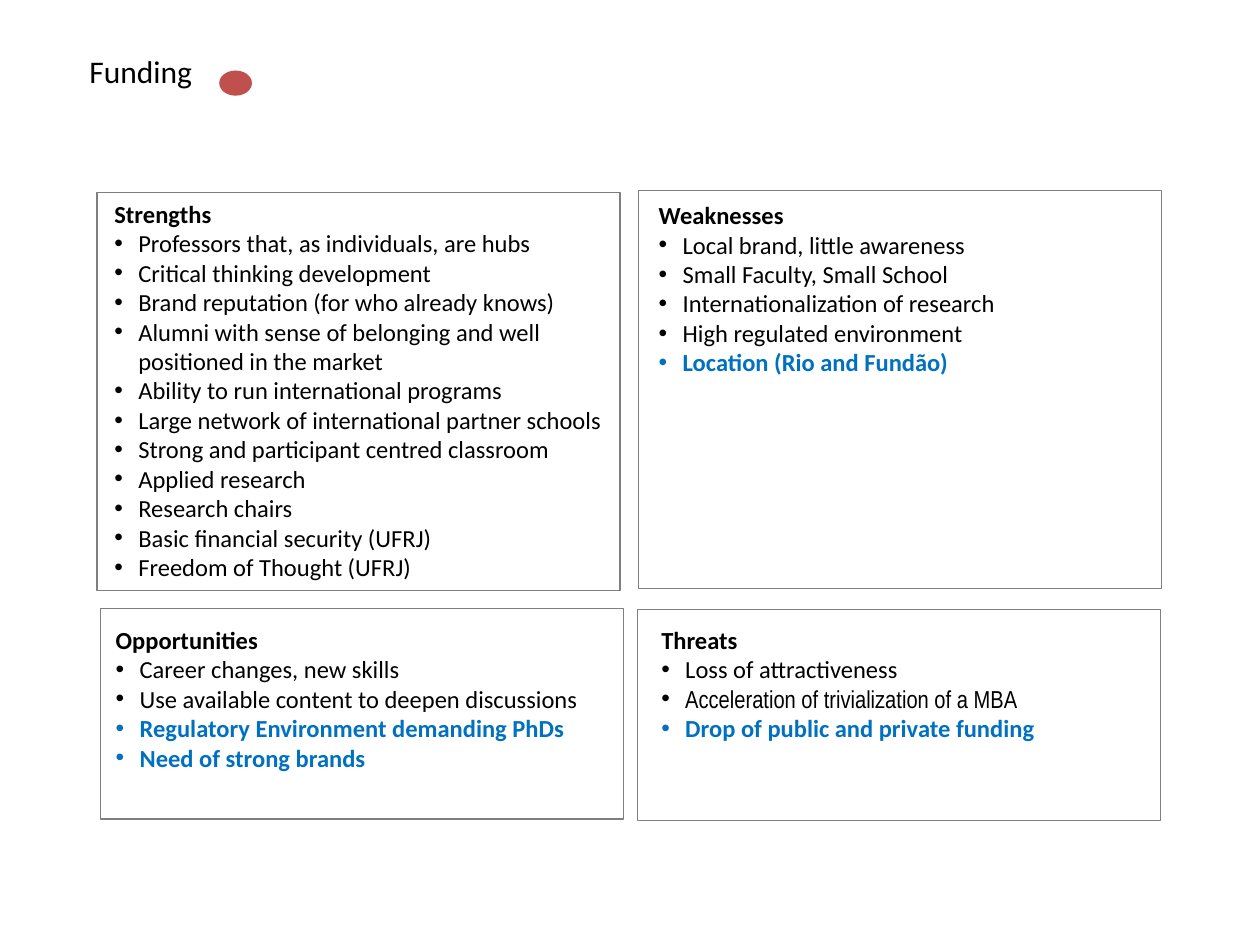
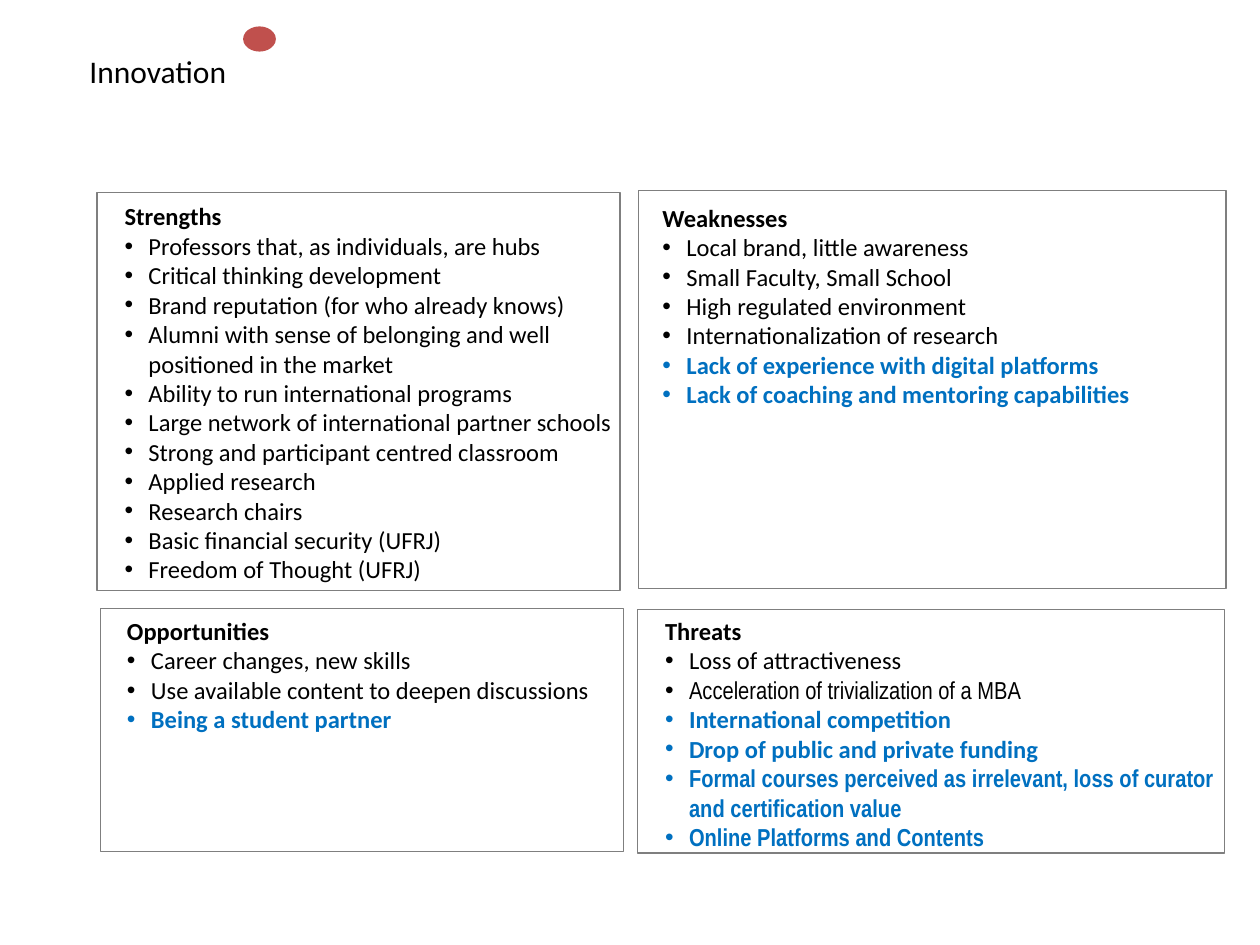
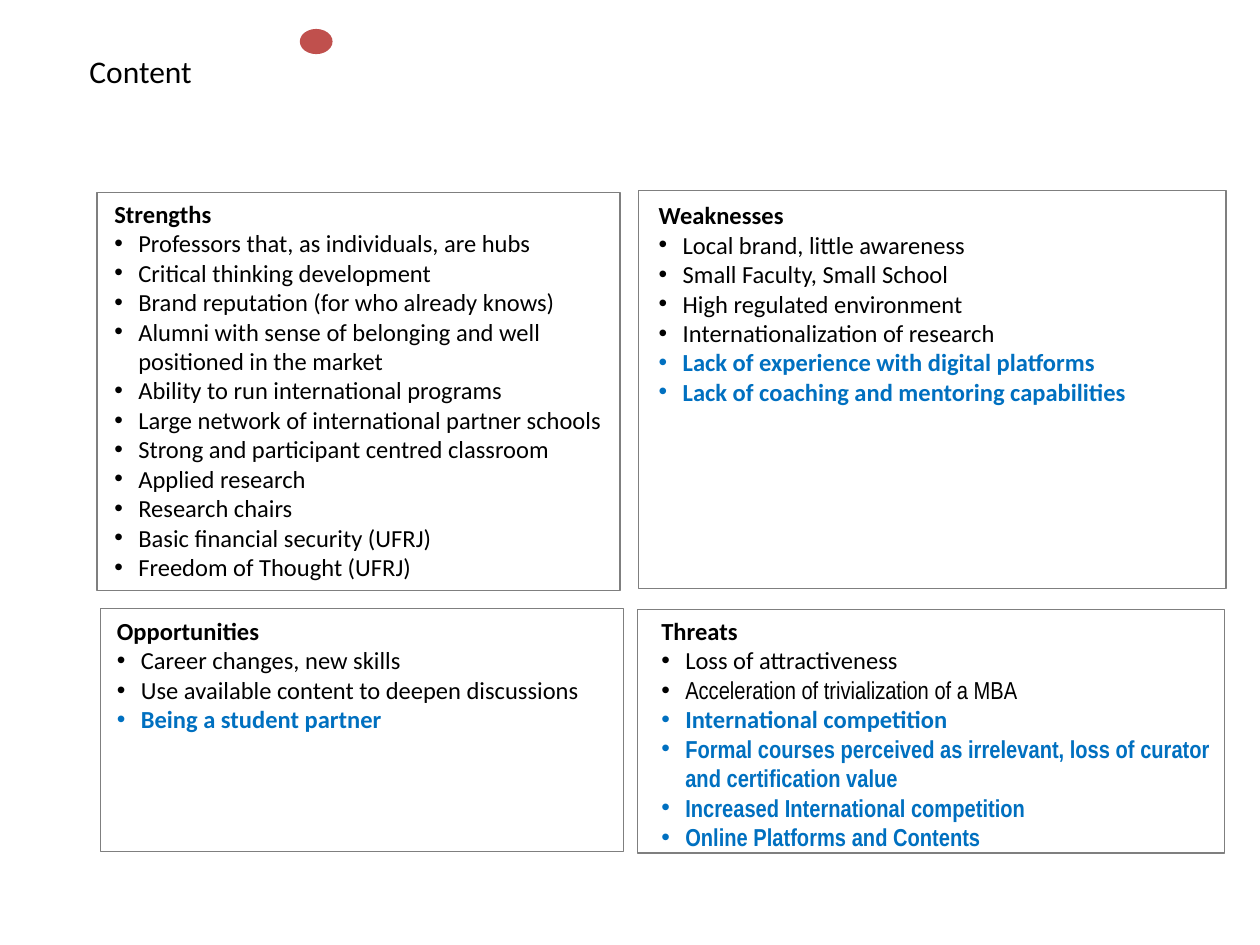
from typing import NamedTuple

from lxml import etree
from pptx import Presentation
from pptx.dml.color import RGBColor
from pptx.enum.shapes import MSO_SHAPE
from pptx.enum.text import MSO_ANCHOR, MSO_AUTO_SIZE, PP_ALIGN
from pptx.oxml.ns import qn
from pptx.util import Inches, Pt

OVAL, RECTANGLE = MSO_SHAPE.OVAL, MSO_SHAPE.RECTANGLE
TOP, LEFT, FIT_TEXT = MSO_ANCHOR.TOP, PP_ALIGN.LEFT, MSO_AUTO_SIZE.SHAPE_TO_FIT_TEXT

BLACK = RGBColor(0x00, 0x00, 0x00)
HIGHLIGHT = RGBColor(0x00, 0x70, 0xC0)
MARKER = RGBColor(0xC0, 0x50, 0x4D)
FRAME = RGBColor(0x7F, 0x7F, 0x7F)

COLUMNS, ROWS = 100, 75
TITLE_ONLY = 5
LINE_ROWS, PADDING_ROWS = 2.35, 1


class Point(NamedTuple):
    text: str
    highlighted: bool = False
    font: str = "Calibri"


class Note(NamedTuple):
    """A headed list: its place and width in columns and rows, and its height in lines."""
    left: float
    top: float
    width: float
    lines: int
    heading: str
    points: list


class Analysis(NamedTuple):
    title: str
    title_width: float
    marker: tuple
    right_width: float
    lower_height: float
    notes: list


def plain(*texts):
    return [Point(text) for text in texts]


def new(*texts, font="Calibri"):
    return [Point(text, True, font) for text in texts]


STRENGTHS = plain(
    "Professors that, as individuals, are hubs",
    "Critical thinking development",
    "Brand reputation (for who already knows)",
    "Alumni with sense of belonging and well positioned in the market",
    "Ability to run international programs",
    "Large network of international partner schools",
    "Strong and participant centred classroom",
    "Applied research",
    "Research chairs",
    "Basic financial security (UFRJ)",
    "Freedom of Thought (UFRJ)",
)
LOCAL_LIMITS = plain("Local brand, little awareness", "Small Faculty, Small School")
DIGITAL_WEAKNESSES = (
    LOCAL_LIMITS
    + plain("High regulated environment", "Internationalization of research")
    + new("Lack of experience with digital platforms",
          "Lack of coaching and mentoring capabilities")
)
OPPORTUNITIES = plain("Career changes, new skills",
                      "Use available content to deepen discussions")
PARTNER_OPPORTUNITIES = OPPORTUNITIES + new("Being a student partner")
THREATS = plain("Loss of attractiveness") + [
    Point("Acceleration of trivialization of a MBA", font="Arial Narrow")]
COMPETITION = new("International competition")
FUNDING_DROP = new("Drop of public and private funding")
IRRELEVANCE = new("Formal courses perceived as irrelevant, loss of curator "
                  "and certification value", font="Arial Narrow")
ONLINE = new("Online Platforms and Contents", font="Arial Narrow")

ANALYSES = [
    Analysis("Funding", 10.3, (17.4, 5.6), 41.5, 16.7, [
        Note(8.1, 15.3, 43.3, 13, "Strengths", STRENGTHS),
        Note(51.3, 15.4, 40.6, 7, "Weaknesses",
             LOCAL_LIMITS
             + plain("Internationalization of research", "High regulated environment")
             + new("Location (Rio and Fundão)")),
        Note(8.2, 49.1, 43.3, 5, "Opportunities",
             OPPORTUNITIES + new("Regulatory Environment demanding PhDs",
                                 "Need of strong brands")),
        Note(51.5, 49.1, 40.6, 7, "Threats", THREATS + FUNDING_DROP),
    ]),
    Analysis("Innovation", 13, (19.3, 2.1), 46.6, 19.3, [
        Note(8.9, 15.5, 43.3, 13, "Strengths", STRENGTHS),
        Note(51.6, 15.6, 45.6, 8, "Weaknesses", DIGITAL_WEAKNESSES),
        Note(9.1, 48.4, 43.3, 4, "Opportunities", PARTNER_OPPORTUNITIES),
        Note(51.8, 48.4, 48.2, 8, "Threats",
             THREATS + COMPETITION + FUNDING_DROP + IRRELEVANCE + ONLINE),
    ]),
    Analysis("Content", 10.2, (23.8, 2.3), 46.6, 19.3, [
        Note(8.1, 15.3, 43.3, 13, "Strengths", STRENGTHS),
        Note(51.3, 15.4, 46, 8, "Weaknesses", DIGITAL_WEAKNESSES),
        Note(8.3, 48.4, 43.3, 5, "Opportunities", PARTNER_OPPORTUNITIES),
        Note(51.5, 48.4, 45.8, 8, "Threats",
             THREATS + COMPETITION + IRRELEVANCE
             + new("Increased International competition", font="Arial Narrow") + ONLINE),
    ]),
]


class Deck:
    def __init__(self):
        self.presentation = Presentation()
        self.presentation.slide_width = Inches(10)
        self.presentation.slide_height = Inches(7.5)
        self.slide = None

    def place(self, left, top, width, height):
        """Turn columns and rows of the grid into slide lengths."""
        column = self.presentation.slide_width / COLUMNS
        row = self.presentation.slide_height / ROWS
        return [round(length) for length in
                (left * column, top * row, width * column, height * row)]

    def style(self, paragraph, size, name="Calibri", color=BLACK, bold=False):
        paragraph.alignment = LEFT
        font = paragraph.font
        font.size, font.name, font.bold = Pt(size), name, bold
        font.color.rgb = color

    def add_slide(self, title, width):
        layout = self.presentation.slide_layouts[TITLE_ONLY]
        self.slide = self.presentation.slides.add_slide(layout)
        shape = self.slide.shapes.title
        shape.left, shape.top, shape.width, shape.height = self.place(6.1, 3.6, width, 4)
        frame = shape.text_frame
        frame.text = title
        frame.word_wrap = False
        frame.auto_size = FIT_TEXT
        frame.vertical_anchor = TOP
        self.style(frame.paragraphs[0], 18)

    def add_bullet(self, paragraph):
        properties = paragraph._p.get_or_add_pPr()
        indent = Inches(0.19)
        properties.set("marL", str(indent))
        properties.set("indent", str(-indent))
        etree.SubElement(properties, qn("a:buFont"), typeface="Arial")
        etree.SubElement(properties, qn("a:buChar"), char="•")

    def add_note(self, note):
        height = note.lines * LINE_ROWS + PADDING_ROWS
        box = self.slide.shapes.add_textbox(
            *self.place(note.left, note.top, note.width, height))
        frame = box.text_frame
        frame.word_wrap = True
        frame.auto_size = FIT_TEXT
        heading = frame.paragraphs[0]
        heading.text = note.heading
        self.style(heading, 14, bold=True)
        for point in note.points:
            paragraph = frame.add_paragraph()
            paragraph.text = point.text
            self.add_bullet(paragraph)
            color = HIGHLIGHT if point.highlighted else BLACK
            self.style(paragraph, 14, point.font, color, point.highlighted)

    def add_marker(self, left, top):
        shape = self.slide.shapes.add_shape(OVAL, *self.place(left, top, 2.6, 2))
        shape.shadow.inherit = False
        shape.fill.solid()
        shape.fill.fore_color.rgb = MARKER
        shape.line.fill.background()

    def add_frame(self, left, top, width, height):
        shape = self.slide.shapes.add_shape(
            RECTANGLE, *self.place(left, top, width, height))
        shape.shadow.inherit = False
        shape.fill.background()
        shape.line.color.rgb = FRAME
        shape.line.width = Pt(0.75)

    def add_analysis(self, analysis):
        self.add_slide(analysis.title, analysis.title_width)
        for note in analysis.notes:
            self.add_note(note)
        self.add_marker(*analysis.marker)
        left_width, upper_height = 41.5, 31.6
        self.add_frame(7.7, 15.3, left_width, upper_height)
        self.add_frame(50.7, 15.1, analysis.right_width, upper_height)
        self.add_frame(8, 48.3, left_width, analysis.lower_height)
        self.add_frame(50.6, 48.4, analysis.right_width, analysis.lower_height)


def main():
    deck = Deck()
    for analysis in ANALYSES:
        deck.add_analysis(analysis)
    deck.presentation.save("out.pptx")


if __name__ == "__main__":
    main()
